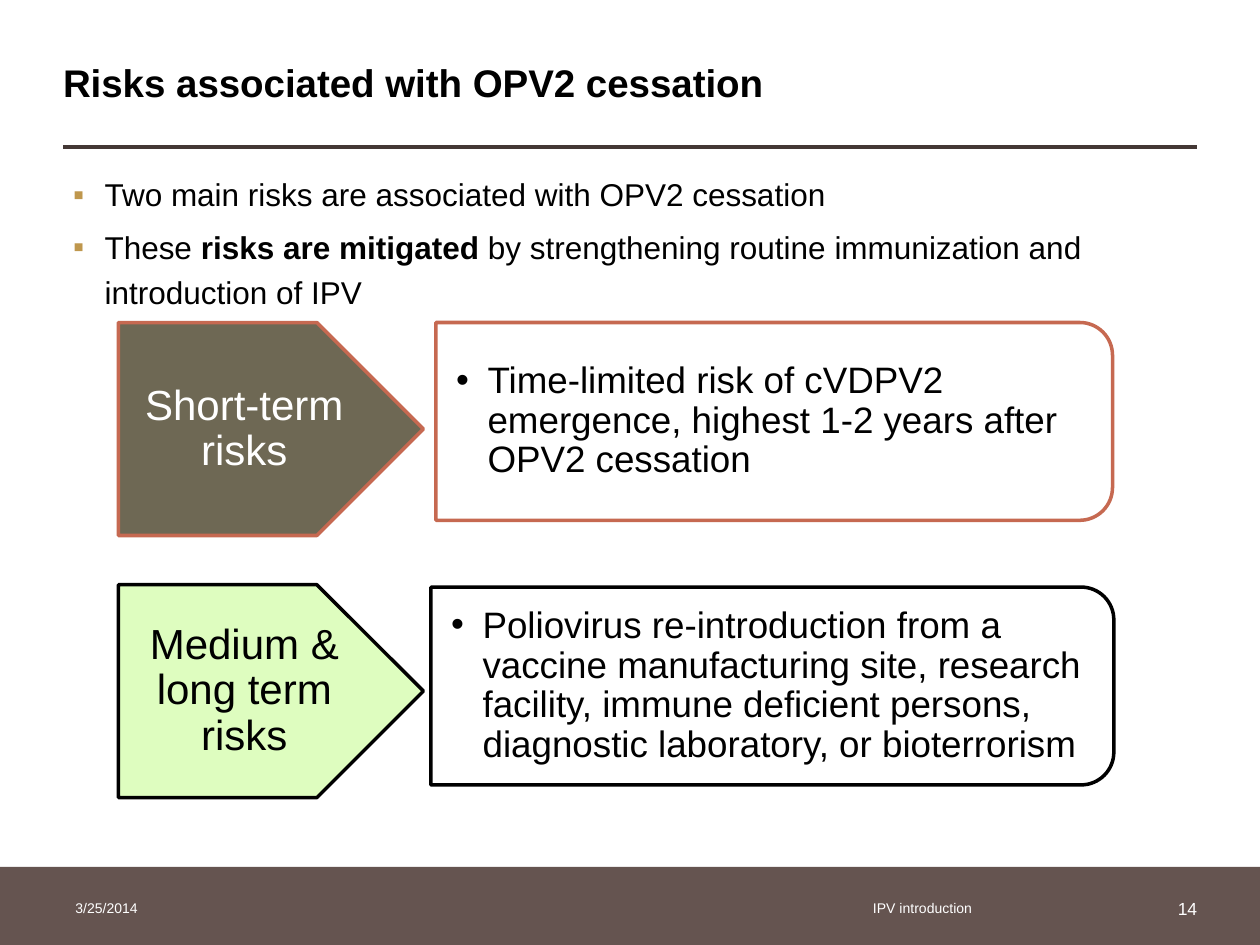
from dataclasses import dataclass
from math import cos, pi, sin

from lxml.etree import SubElement
from pptx import Presentation
from pptx.dml.color import RGBColor
from pptx.enum.shapes import MSO_CONNECTOR as CONNECTOR, MSO_SHAPE as SHAPE
from pptx.enum.text import MSO_ANCHOR as ANCHOR, MSO_AUTO_SIZE as AUTO_SIZE, PP_ALIGN as ALIGN
from pptx.oxml.ns import qn
from pptx.util import Inches, Pt

BLACK = RGBColor(0x00, 0x00, 0x00)
WHITE = RGBColor(0xFF, 0xFF, 0xFF)
RULE = RGBColor(0x44, 0x38, 0x35)
FOOTER = RGBColor(0x65, 0x54, 0x50)
GOLD = RGBColor(0xBF, 0x97, 0x4D)
OLIVE = RGBColor(0x6E, 0x68, 0x54)
RUST = RGBColor(0xC6, 0x69, 0x51)
LIME = RGBColor(0xDE, 0xFD, 0xBF)

CORNER_RADIUS = 0.26
CORNER_STEPS = 16


@dataclass
class Risk:
    term: str
    detail: str
    arrow_top: float
    box_left: float
    box_top: float
    box_width: float
    fill: RGBColor
    outline: RGBColor
    term_color: RGBColor


@dataclass
class FooterItem:
    text: str
    left: float
    width: float
    size: int
    align: ALIGN = ALIGN.LEFT


RISKS = [
    Risk("Short-term risks",
         "Time-limited risk of cVDPV2 emergence, highest 1-2 years after OPV2 cessation",
         2.56, 3.46, 2.56, 5.37, OLIVE, RUST, WHITE),
    Risk("Medium & long term risks",
         "Poliovirus re-introduction from a vaccine manufacturing site, research facility, "
         "immune deficient persons, diagnostic laboratory, or bioterrorism",
         4.64, 3.42, 4.66, 5.42, LIME, BLACK, BLACK),
]
FOOTER_ITEMS = [
    FooterItem("3/25/2014", 0.5, 2.33, 8),
    FooterItem("IPV introduction", 6.83, 2.52, 8),
    FooterItem("14", 9.18, 0.42, 10, ALIGN.RIGHT),
]
SUMMARY = [
    [("Two main risks are associated with OPV2 cessation", False)],
    [("These ", False), ("risks are mitigated", True),
     (" by strengthening routine immunization and introduction of IPV", False)],
]


def place(shape, left: float, top: float, width: float, height: float) -> None:
    shape.left, shape.top = Inches(left), Inches(top)
    shape.width, shape.height = Inches(width), Inches(height)


def set_frame(frame, insets: tuple, anchor: ANCHOR) -> None:
    """Insets run left, top, right, bottom, in inches."""
    frame.word_wrap = True
    frame.auto_size = AUTO_SIZE.NONE
    frame.vertical_anchor = anchor
    (frame.margin_left, frame.margin_top,
     frame.margin_right, frame.margin_bottom) = map(Inches, insets)


def style(paragraph, size: int, color: RGBColor, align: ALIGN = ALIGN.LEFT) -> None:
    paragraph.alignment = align
    paragraph.font.name = "Arial"
    paragraph.font.size = Pt(size)
    paragraph.font.color.rgb = color


def add_bullet(paragraph, char: str, color: RGBColor) -> None:
    properties = paragraph._p.get_or_add_pPr()
    properties.set("marL", str(Inches(0.25)))
    properties.set("indent", str(-Inches(0.25)))
    SubElement(SubElement(properties, qn("a:buClr")), qn("a:srgbClr"), val=str(color))
    SubElement(properties, qn("a:buFont"), typeface="Arial")
    SubElement(properties, qn("a:buChar"), char=char)


def paint(shape, fill: RGBColor, outline: RGBColor) -> None:
    shape.shadow.inherit = False
    shape.fill.solid()
    shape.fill.fore_color.rgb = fill
    shape.line.color.rgb = outline
    shape.line.width = Pt(2)


def add_title(slide) -> None:
    title = slide.shapes.title
    place(title, 0.5, 0.51, 9, 0.33)
    set_frame(title.text_frame, (0, 0, 0, 0), ANCHOR.MIDDLE)
    heading = title.text_frame.paragraphs[0]
    heading.text = "Risks associated with OPV2 cessation"
    style(heading, 22, BLACK)
    heading.font.bold = True
    heading.line_spacing = 0.9


def add_summary(slide) -> None:
    body = slide.placeholders[1]
    place(body, 0.58, 1.33, 9, 4.92)
    frame = body.text_frame
    set_frame(frame, (0, 0, 0, 0), ANCHOR.TOP)
    for index, pieces in enumerate(SUMMARY):
        point = frame.add_paragraph() if index else frame.paragraphs[0]
        style(point, 18, BLACK)
        point.line_spacing = Pt(26)
        point.space_before, point.space_after = Pt(0), Pt(4)
        add_bullet(point, "▪", GOLD)
        for text, bold in pieces:
            run = point.add_run()
            run.text = text
            if bold:
                run.font.bold = True


def add_arrow(slide, risk: Risk) -> None:
    arrow = slide.shapes.add_shape(SHAPE.PENTAGON, Inches(0.94), Inches(risk.arrow_top),
                                   Inches(2.42), Inches(1.69))
    arrow.adjustments[0] = 0.5
    paint(arrow, risk.fill, risk.outline)
    set_frame(arrow.text_frame, (0.02, 0.02, 0.02, 0.02), ANCHOR.MIDDLE)
    term = arrow.text_frame.paragraphs[0]
    term.text = risk.term
    style(term, 24, risk.term_color, ALIGN.CENTER)
    term.line_spacing = 0.9


def add_detail_box(slide, risk: Risk) -> None:
    """Box with square left corners and rounded right corners."""
    left, top = risk.box_left, risk.box_top
    right, bottom = left + risk.box_width, top + 1.57
    center_x = right - CORNER_RADIUS
    outline = []
    for center_y, start in ((top + CORNER_RADIUS, -pi / 2), (bottom - CORNER_RADIUS, 0)):
        for step in range(CORNER_STEPS + 1):
            angle = start + step * pi / 2 / CORNER_STEPS
            outline.append((Inches(center_x + CORNER_RADIUS * cos(angle)),
                            Inches(center_y + CORNER_RADIUS * sin(angle))))
    outline.append((Inches(left), Inches(bottom)))
    builder = slide.shapes.build_freeform(Inches(left), Inches(top))
    builder.add_line_segments(outline, close=True)
    box = builder.convert_to_shape()
    paint(box, WHITE, risk.outline)
    white_fill = box._element.spPr.find(qn("a:solidFill")).find(qn("a:srgbClr"))
    SubElement(white_fill, qn("a:alpha"), val="90000")
    set_frame(box.text_frame, (0.16, 0.09, 0.09, 0.09), ANCHOR.MIDDLE)
    detail = box.text_frame.paragraphs[0]
    detail.text = risk.detail
    style(detail, 21, BLACK)
    detail.line_spacing = 0.9
    add_bullet(detail, "•", BLACK)


def add_rule(slide) -> None:
    rule = slide.shapes.add_connector(CONNECTOR.STRAIGHT, Inches(0.5), Inches(1.17),
                                      Inches(9.5), Inches(1.17))
    rule.line.color.rgb = RULE
    rule.line.width = Pt(2.25)
    SubElement(rule._element.spPr, qn("a:effectLst"))


def add_footer(slide) -> None:
    band = slide.shapes.add_shape(SHAPE.RECTANGLE, 0, Inches(6.88), Inches(10), Inches(0.62))
    paint(band, FOOTER, FOOTER)
    band.line.fill.background()
    for item in FOOTER_ITEMS:
        label = slide.shapes.add_textbox(Inches(item.left), Inches(7.01),
                                         Inches(item.width), Inches(0.4))
        set_frame(label.text_frame, (0.1, 0.05, 0.1, 0.05), ANCHOR.MIDDLE)
        label.text_frame.text = item.text
        style(label.text_frame.paragraphs[0], item.size, WHITE, item.align)


def main() -> None:
    deck = Presentation()
    deck.slide_width, deck.slide_height = Inches(10), Inches(7.5)
    slide = deck.slides.add_slide(deck.slide_layouts[1])
    add_title(slide)
    add_rule(slide)
    add_summary(slide)
    for risk in RISKS:
        add_arrow(slide, risk)
        add_detail_box(slide, risk)
    add_footer(slide)
    deck.save("out.pptx")


if __name__ == "__main__":
    main()
